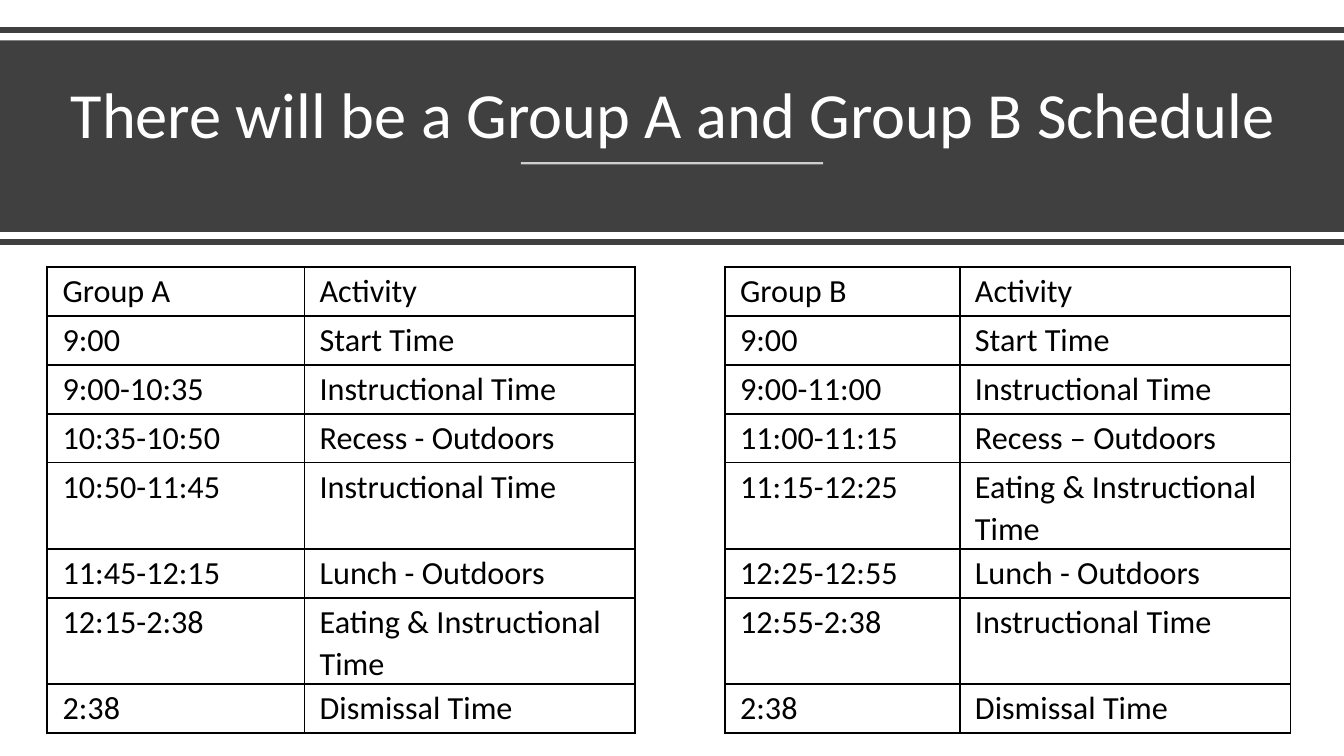
from dataclasses import dataclass

from lxml.etree import SubElement
from pptx import Presentation
from pptx.dml.color import RGBColor
from pptx.enum.shapes import MSO_CONNECTOR as Connector, MSO_SHAPE as Shape
from pptx.enum.text import MSO_ANCHOR as Anchor, PP_ALIGN as Align
from pptx.oxml import parse_xml
from pptx.oxml.ns import nsdecls, qn
from pptx.util import Inches, Pt

# Content
TITLE = "There will be a Group A and Group B Schedule"
GROUP_A = [
    ("Group A", "Activity"),
    ("9:00", "Start Time"),
    ("9:00-10:35", "Instructional Time"),
    ("10:35-10:50", "Recess - Outdoors"),
    ("10:50-11:45", "Instructional Time"),
    ("11:45-12:15", "Lunch - Outdoors"),
    ("12:15-2:38", "Eating & Instructional Time"),
    ("2:38", "Dismissal Time"),
]
GROUP_B = [
    ("Group B", "Activity"),
    ("9:00", "Start Time"),
    ("9:00-11:00", "Instructional Time"),
    ("11:00-11:15", "Recess – Outdoors"),
    ("11:15-12:25", "Eating & Instructional Time"),
    ("12:25-12:55", "Lunch - Outdoors"),
    ("12:55-2:38", "Instructional Time"),
    ("2:38", "Dismissal Time"),
]


@dataclass(frozen=True)
class Theme:
    font: str = "Calibri"
    band: str = "404040"
    light: str = "FFFFFF"
    ink: str = "000000"
    title_size: float = 46
    cell_size: float = 23
    rule_width: float = 4
    thin_width: float = 1.5


THEME = Theme()

# Layout, in inches
WIDTH, HEIGHT = 13.33, 7.5
BAND_TOP, BAND_HEIGHT = 0.4, 1.9
RULE_GAP = 0.1
UNDERLINE_WIDTH, UNDERLINE_Y = 3, 1.62
TITLE_BOX = (0.58, 0.54, 12.18, 1.02)
TABLE_LEFT, TABLE_TOP, TABLE_HEIGHT = 0.47, 2.65, 3.88
COLUMNS = [2.55, 3.28, 0.89, 2.33, 3.28]
GAP_COLUMN = 2


def style_text(paragraph, size, color, spacing):
    paragraph.line_spacing = spacing
    for run in paragraph.runs:
        run.font.name = THEME.font
        run.font.size = Pt(size)
        run.font.color.rgb = RGBColor.from_string(color)


def add_rule(slide, left, right, y, color, width, opacity=100):
    rule = slide.shapes.add_connector(
        Connector.STRAIGHT, Inches(left), Inches(y), Inches(right), Inches(y))
    rule.line.color.rgb = RGBColor.from_string(color)
    rule.line.width = Pt(width)
    properties = rule._element.spPr
    SubElement(properties, qn("a:effectLst"))
    if opacity < 100:
        color_element = next(properties.iter(qn("a:srgbClr")))
        SubElement(color_element, qn("a:alpha"), val=str(opacity * 1000))


def set_borders(cell, visible_sides):
    properties = cell._tc.get_or_add_tcPr()
    solid = f'<a:solidFill><a:srgbClr val="{THEME.ink}"/></a:solidFill>'
    for position, side in enumerate("LRTB"):
        paint = solid if side in visible_sides else "<a:noFill/>"
        properties.insert(position, parse_xml(
            f'<a:ln{side} {nsdecls("a")} w="{Pt(THEME.thin_width)}">{paint}</a:ln{side}>'))


def add_band(slide):
    band = slide.shapes.add_shape(
        Shape.RECTANGLE, 0, Inches(BAND_TOP), Inches(WIDTH), Inches(BAND_HEIGHT))
    band.shadow.inherit = False
    band.fill.solid()
    band.fill.fore_color.rgb = RGBColor.from_string(THEME.band)
    band.line.fill.background()
    for y in (BAND_TOP - RULE_GAP, BAND_TOP + BAND_HEIGHT + RULE_GAP):
        add_rule(slide, 0, WIDTH, y, THEME.band, THEME.rule_width)


def add_title(slide):
    title = slide.shapes.title
    title.left, title.top, title.width, title.height = map(Inches, TITLE_BOX)
    frame = title.text_frame
    frame.text = TITLE
    frame.word_wrap = True
    frame.vertical_anchor = Anchor.BOTTOM
    frame.paragraphs[0].alignment = Align.CENTER
    style_text(frame.paragraphs[0], THEME.title_size, THEME.light, 0.9)
    # Bring the title in front of the band
    slide.shapes._spTree.append(title._element)
    left = (WIDTH - UNDERLINE_WIDTH) / 2
    add_rule(slide, left, left + UNDERLINE_WIDTH, UNDERLINE_Y,
             THEME.light, THEME.thin_width, opacity=75)


def add_schedule(slide):
    rows = [(*a, "", *b) for a, b in zip(GROUP_A, GROUP_B)]
    table = slide.shapes.add_table(
        len(rows), len(COLUMNS), Inches(TABLE_LEFT), Inches(TABLE_TOP),
        Inches(sum(COLUMNS)), Inches(TABLE_HEIGHT)).table
    table.first_row = table.horz_banding = False
    for column, width in zip(table.columns, COLUMNS):
        column.width = Inches(width)
    for row, texts in zip(table.rows, rows):
        for index, (cell, text) in enumerate(zip(row.cells, texts)):
            cell.text = text
            cell.margin_left = cell.margin_right = Inches(0.15)
            cell.margin_top, cell.margin_bottom = Inches(0.02), 0
            style_text(cell.text_frame.paragraphs[0], THEME.cell_size, THEME.ink, 1.07)
            cell.fill.background()
            set_borders(cell, "LR" if index == GAP_COLUMN else "LRTB")


def main():
    presentation = Presentation()
    presentation.slide_width, presentation.slide_height = Inches(WIDTH), Inches(HEIGHT)
    slide = presentation.slides.add_slide(presentation.slide_layouts.get_by_name("Title Only"))
    add_band(slide)
    add_title(slide)
    add_schedule(slide)
    presentation.save("out.pptx")


if __name__ == "__main__":
    main()
